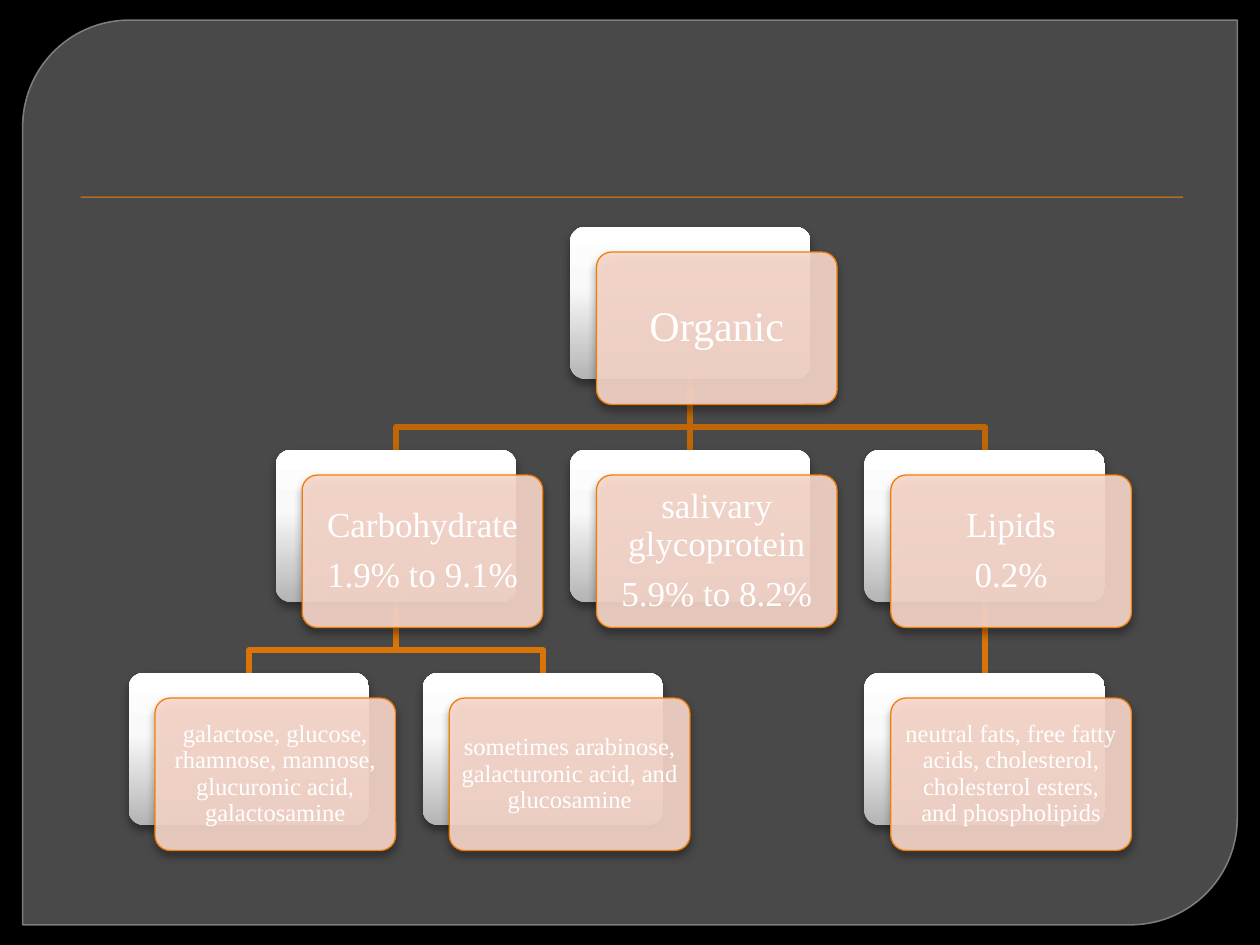
import copy

import pptx
import pptx.dml.color
import pptx.enum.dml
import pptx.enum.shapes
import pptx.enum.text
import pptx.oxml
import pptx.oxml.ns
import pptx.util
from pptx.util import Inches, Pt

SHAPE = pptx.enum.shapes.MSO_SHAPE
ORANGE = "F07F09"
COLUMN_X, COLUMN_STEP = 1.02, 1.168
ROW_Y, ROW_STEP = 1.8, 1.77
CARD_W, CARD_H = 1.91, 1.21
OFFSET_X, OFFSET_Y = 0.21, 0.2
BEND = 0.38

# Text size and inset at each level of the tree
LEVELS = [(24, 0.1), (20, 0.08), (14, 0.06)]
LINK_COLORS = ["C06607", "DA7308"]

# name: (level, column, parent, paragraphs)
NODES = {
    "organic": (0, 3, None, ["Organic"]),
    "carbohydrate": (1, 1, "organic", ["Carbohydrate", "1.9% to 9.1%"]),
    "sugars": (2, 0, "carbohydrate",
               ["galactose, glucose, rhamnose, mannose, glucuronic acid, galactosamine"]),
    "others": (2, 2, "carbohydrate",
               ["sometimes arabinose, galacturonic acid, and glucosamine"]),
    "glycoprotein": (1, 3, "organic", ["salivary glycoprotein", "5.9% to 8.2%"]),
    "lipids": (1, 5, "organic", ["Lipids", "0.2%"]),
    "fats": (2, 5, "lipids",
             ["neutral fats, free fatty acids, cholesterol, cholesterol esters, and phospholipids"]),
}


def rgb(color):
    return pptx.dml.color.RGBColor.from_string(color)


def assign(obj, values):
    for name, value in values.items():
        setattr(obj, name, value)


def set_alpha(fill_format, percent):
    """Make a solid fill partly transparent."""
    clr = fill_format._xPr.find(".//" + pptx.oxml.ns.qn("a:srgbClr"))
    alpha = clr.makeelement(pptx.oxml.ns.qn("a:alpha"), {"val": str(percent * 1000)})
    clr.append(alpha)


def add_shadow(sp, alpha, blur, dist):
    """Cast a black shadow straight down; blur and dist are points."""
    sp._element.spPr.append(pptx.oxml.parse_xml(
        f'<a:effectLst {pptx.oxml.ns.nsdecls("a")}>'
        f'<a:outerShdw blurRad="{int(Pt(blur))}" dist="{int(Pt(dist))}" dir="5400000" '
        f'algn="t" rotWithShape="0"><a:srgbClr val="000000"><a:alpha val="{alpha * 1000}"/>'
        '</a:srgbClr></a:outerShdw></a:effectLst>'))


def card_corner(name):
    level, column = NODES[name][:2]
    return COLUMN_X + column * COLUMN_STEP, ROW_Y + level * ROW_STEP


class Deck:
    font = {"name": "Times New Roman", "color": "FFFFFF"}

    def __init__(self):
        self.prs = pptx.Presentation()
        assign(self.prs, {"slide_width": Inches(10), "slide_height": Inches(7.5)})
        self.s = self.prs.slides.add_slide(self.prs.slide_layouts[6])
        self.s.background.fill.solid()
        self.s.background.fill.fore_color.rgb = rgb("000000")

    def shape(self, kind, x, y, w, h, adj=(), fill=None, alpha=100,
              line=None, width=0.75, shadow=None):
        sp = self.s.shapes.add_shape(kind, Inches(x), Inches(y), Inches(w), Inches(h))
        for i, value in enumerate(adj):
            sp.adjustments[i] = value
        if fill:
            sp.fill.solid()
            sp.fill.fore_color.rgb = rgb(fill)
            set_alpha(sp.fill, alpha)
        if line:
            sp.line.color.rgb = rgb(line)
            sp.line.width = Pt(width)
        else:
            sp.line.fill.background()
        if shadow:
            add_shadow(sp, *shadow)
        else:
            sp.shadow.inherit = False
        return sp

    def gradient(self, sp, stops):
        """Fill from bottom to top with (position, colour) stops."""
        sp.fill.gradient()
        sp.fill.gradient_angle = 90
        gs_list = sp._element.spPr.find(".//" + pptx.oxml.ns.qn("a:gsLst"))
        while len(gs_list) < len(stops):
            gs_list.append(copy.deepcopy(gs_list[0]))
        for stop, (position, color) in zip(sp.fill.gradient_stops, stops):
            stop.color.rgb = rgb(color)
            stop.position = position

    def link(self, parent, child):
        """Join two cards, with a bend when they are in different columns."""
        x1, y1 = card_corner(parent)
        x2, y2 = card_corner(child)
        x1, x2, y1 = x1 + CARD_W / 2, x2 + CARD_W / 2, y1 + CARD_H
        if x1 == x2:
            sp = self.s.shapes.add_connector(
                pptx.enum.shapes.MSO_CONNECTOR.STRAIGHT,
                Inches(x1), Inches(y1), Inches(x2), Inches(y2))
            sp._element.spPr.append(pptx.oxml.parse_xml(
                f'<a:effectLst {pptx.oxml.ns.nsdecls("a")}/>'))
        else:
            builder = self.s.shapes.build_freeform(Inches(x1), Inches(y1))
            bend = y1 + BEND
            builder.add_line_segments(
                [(Inches(x), Inches(y)) for x, y in ((x1, bend), (x2, bend), (x2, y2))],
                close=False)
            sp = builder.convert_to_shape()
            sp.fill.background()
            sp.shadow.inherit = False
        sp.line.color.rgb = rgb(LINK_COLORS[NODES[parent][0]])
        sp.line.width = Pt(3.35)

    def text(self, sp, paragraphs, size, inset):
        tf = sp.text_frame
        sides = ("left", "right", "top", "bottom")
        assign(tf, {"word_wrap": True,
                    "vertical_anchor": pptx.enum.text.MSO_ANCHOR.MIDDLE,
                    **{f"margin_{side}": Inches(inset) for side in sides}})
        for i, words in enumerate(paragraphs):
            p = tf.add_paragraph() if i else tf.paragraphs[0]
            assign(p, {"alignment": pptx.enum.text.PP_ALIGN.CENTER,
                       "line_spacing": 0.9, "space_after": Pt(size * 0.35)})
            r = p.add_run()
            r.text = words
            assign(r.font, {"name": self.font["name"], "size": Pt(size)})
            r.font.color.rgb = rgb(self.font["color"])

    def card(self, name):
        level, _, _, paragraphs = NODES[name]
        x, y = card_corner(name)
        style = {"adj": [0.1], "shadow": (40, 5.2, 3)}
        back = self.shape(SHAPE.ROUNDED_RECTANGLE, x, y, CARD_W, CARD_H, **style)
        self.gradient(back, [(0, "B4B4B4"), (0.6, "F9F9F9"), (1, "FFFFFF")])
        front = self.shape(SHAPE.ROUNDED_RECTANGLE, x + OFFSET_X, y + OFFSET_Y,
                           CARD_W, CARD_H, fill="F9D8CC", alpha=90, line=ORANGE, **style)
        self.text(front, paragraphs, *LEVELS[level])


def main():
    deck = Deck()
    panel = deck.shape(SHAPE.ROUND_2_DIAG_RECTANGLE, 0.18, 0.16, 9.64, 7.18,
                       adj=[0.118, 0], fill="717171", alpha=65, line="898989", width=0.87)
    set_alpha(panel.line.fill, 88)
    deck.shape(SHAPE.RECTANGLE, 0.64, 1.56, 8.75, 0.01, fill=ORANGE, shadow=(75, 1, 1))
    for name, (_, _, parent, _) in reversed(NODES.items()):
        if parent:
            deck.link(parent, name)
    for name in NODES:
        deck.card(name)
    deck.prs.save("out.pptx")


if __name__ == "__main__":
    main()
